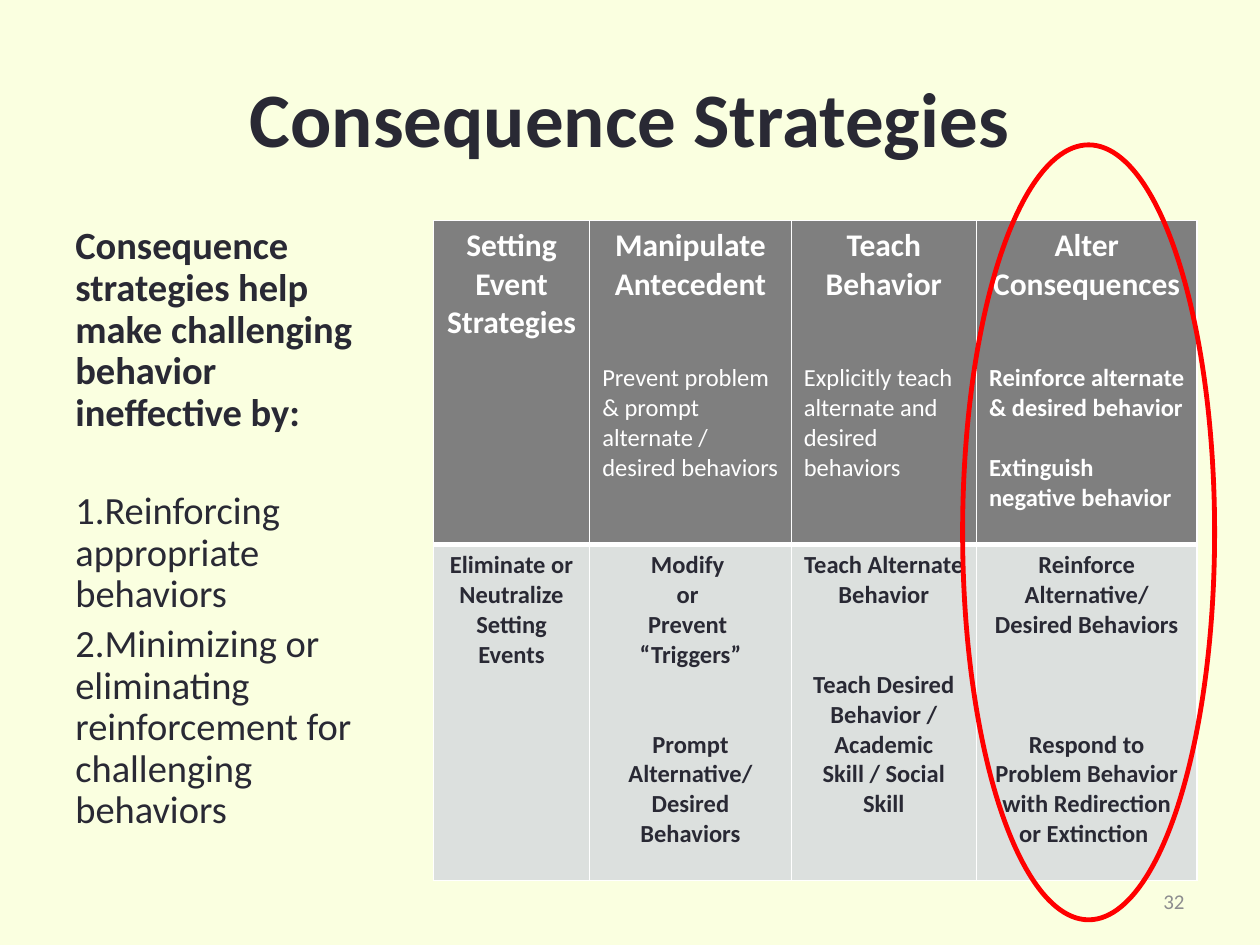
import pptx
import pptx.util
import pptx.dml.color
import pptx.enum.shapes
import pptx.enum.text
import pptx.oxml.ns
from lxml import etree

Inches = pptx.util.Inches
Pt = pptx.util.Pt
Align = pptx.enum.text.PP_ALIGN
Anchor = pptx.enum.text.MSO_ANCHOR
qn = pptx.oxml.ns.qn

COLORS = {"back": "FAFFE0", "ink": "292934", "head": "7F7F7F", "cell": "DCE0DE",
          "white": "FFFFFF", "ring": "FF0000", "page": "8D8D8F"}
LINE = 17.1


def color(name):
    return pptx.dml.color.RGBColor.from_string(COLORS[name])


def write(frame, text, size=14, bold=False, ink="ink", align=Align.LEFT,
          before=0, space=None, number=False):
    para = frame.paragraphs[0]
    if para.runs:
        para = frame.add_paragraph()
    para.alignment = align
    para.space_before = Pt(before)
    para.line_spacing = space
    if number:
        props = para._p.get_or_add_pPr()
        props.set("marL", "0")
        props.set("indent", "0")
        etree.SubElement(props, qn("a:buFont"), typeface="+mj-lt")
        etree.SubElement(props, qn("a:buAutoNum"), type="arabicPeriod")
    run = para.add_run()
    run.text = text
    run.font.name = "Calibri"
    run.font.size = Pt(size)
    run.font.bold = bold
    run.font.color.rgb = color(ink)


class Deck:
    def __init__(self):
        self.file = pptx.Presentation()
        self.file.slide_width = Inches(10)
        self.file.slide_height = Inches(7.5)
        self.slide = self.file.slides.add_slide(self.file.slide_layouts[6])
        fill = self.slide.background.fill
        fill.solid()
        fill.fore_color.rgb = color("back")

    def text(self, box, paras, anchor=Anchor.TOP):
        frame = self.slide.shapes.add_textbox(*map(Inches, box)).text_frame
        frame.word_wrap = True
        frame.vertical_anchor = anchor
        for text, style in paras:
            write(frame, text, **style)

    def border(self, cell, widths):
        props = cell._tc.get_or_add_tcPr()
        for side, width in zip("LRTB", widths):
            line = etree.SubElement(props, qn(f"a:ln{side}"), w=str(Pt(width)))
            fill = etree.SubElement(line, qn("a:solidFill"))
            etree.SubElement(fill, qn("a:srgbClr"), val=COLORS["white"])

    def table(self, spot, cols, rows, fills, edges, cells):
        size = (sum(cols), sum(rows))
        grid = self.slide.shapes.add_table(
            len(rows), len(cols), *map(Inches, spot + size)).table
        grid.first_row = grid.horz_banding = False
        for col, width in zip(grid.columns, cols):
            col.width = Inches(width)
        for r, height in enumerate(rows):
            grid.rows[r].height = Inches(height)
            for c, paras in enumerate(cells[r]):
                cell = grid.cell(r, c)
                self.border(cell, edges[r])
                cell.fill.solid()
                cell.fill.fore_color.rgb = color(fills[r])
                for text, style in paras:
                    write(cell.text_frame, text, **style)

    def ring(self, box, width):
        shape = self.slide.shapes.add_shape(
            pptx.enum.shapes.MSO_SHAPE.OVAL, *map(Inches, box))
        shape.shadow.inherit = False
        shape.fill.background()
        shape.line.color.rgb = color("ring")
        shape.line.width = Pt(width)


def head(text):
    return text, dict(size=18, bold=True, ink="white", align=Align.CENTER)


def note(text, gap=2, bold=False):
    return text, dict(bold=bold, ink="white", before=gap * LINE)


def item(text, gap=0):
    return text, dict(bold=True, align=Align.CENTER, before=gap * LINE)


def main():
    deck = Deck()
    deck.text((0.5, 0.3, 9, 1.25), [
        ("Consequence Strategies", dict(size=44, bold=True, align=Align.CENTER)),
    ], Anchor.MIDDLE)

    body = dict(size=22, space=0.9)
    deck.text((0.5, 1.75, 2.62, 4.95), [
        ("Consequence strategies help make challenging behavior ineffective by:",
         dict(body, bold=True)),
        ("Reinforcing appropriate behaviors", dict(body, before=32.5, number=True)),
        ("Minimizing or eliminating reinforcement for challenging behaviors",
         dict(body, before=4.6, number=True)),
    ])

    tops = [
        [head("Setting Event Strategies")],
        [head("Manipulate Antecedent"),
         note("Prevent problem & prompt alternate / desired behaviors")],
        [head("Teach Behavior"),
         note("Explicitly teach alternate and desired behaviors")],
        [head("Alter Consequences"),
         note("Reinforce alternate & desired behavior", bold=True),
         note("Extinguish negative behavior", gap=1, bold=True)],
    ]
    lows = [
        [item("Eliminate or Neutralize Setting Events")],
        [item("Modify "), item("or "), item("Prevent "), item("“Triggers”"),
         item("Prompt Alternative/", 2), item("Desired Behaviors")],
        [item("Teach Alternate Behavior"),
         item("Teach Desired Behavior / Academic Skill / Social Skill", 2)],
        [item("Reinforce Alternative/"), item("Desired Behaviors"),
         item("Respond to Problem Behavior with Redirection or Extinction ", 3)],
    ]
    deck.table((3.44, 1.75), (1.24, 1.6, 1.47, 1.75), (2.57, 2.67),
               ("head", "cell"), ((1, 1, 1, 3), (1, 1, 3, 1)), (tops, lows))

    deck.ring((7.64, 1.15, 2, 6.15), 2.75)
    deck.text((7.17, 6.95, 2.33, 0.4), [
        ("32", dict(size=12, ink="page", align=Align.RIGHT)),
    ], Anchor.MIDDLE)
    deck.file.save("out.pptx")


if __name__ == "__main__":
    main()
